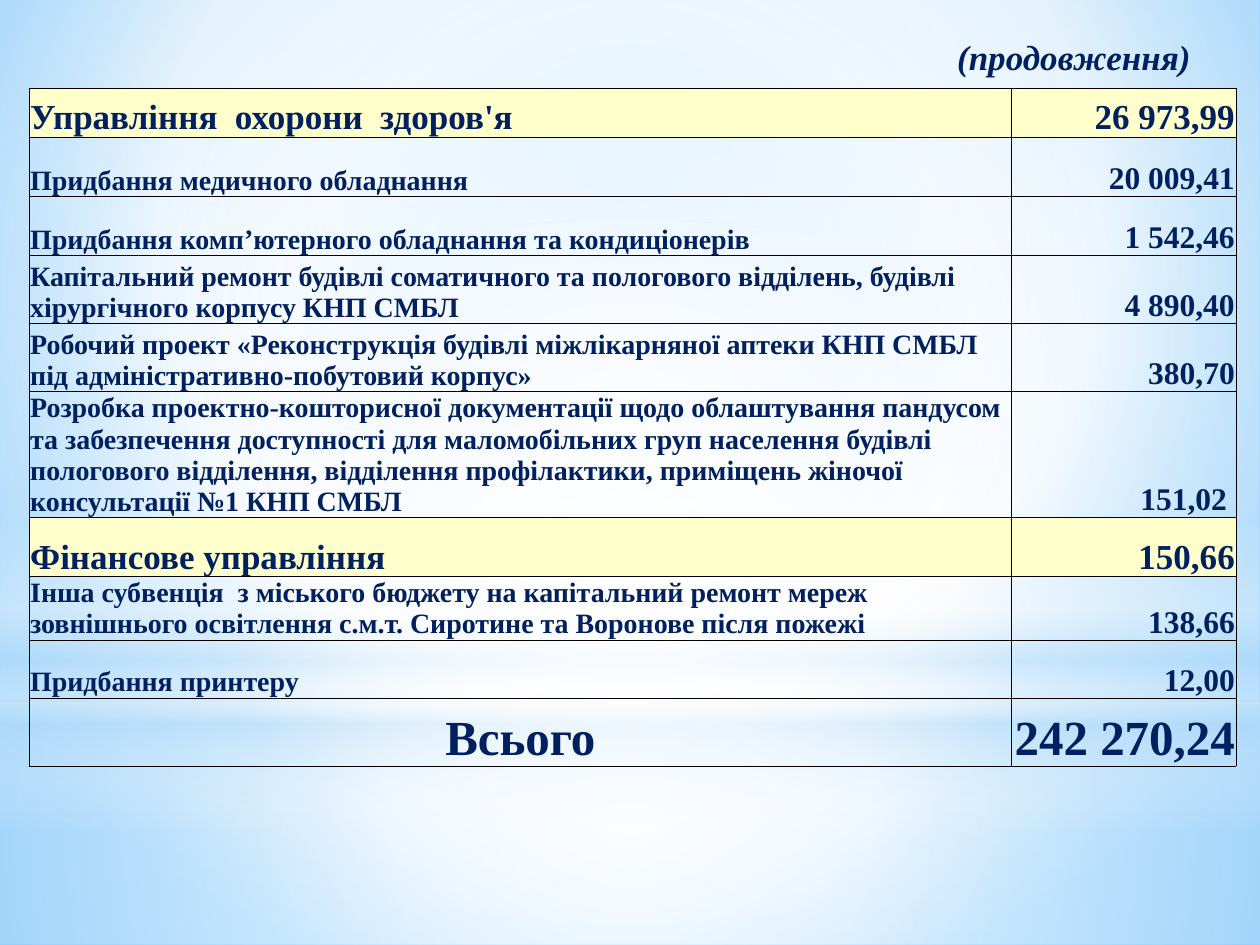
from typing import NamedTuple, Optional

from lxml.etree import SubElement as Sub
from pptx import Presentation
from pptx.dml.color import RGBColor as Rgb
from pptx.enum.shapes import MSO_SHAPE as Shp
from pptx.enum.text import MSO_ANCHOR as Anc, MSO_AUTO_SIZE as Fit, PP_ALIGN as Al
from pptx.oxml.ns import qn
from pptx.util import Inches, Pt

INK = {
    "navy": "002060", "cream": "FFFFCC", "black": "000000", "white": "FFFFFF",
    "pale": "B4DCFA", "sky": "9ED5FF", "blue": "5BB9FF",
}
FONT = "Times New Roman"
MID = (50, 50, 50, 50)


class Stop(NamedTuple):
    pos: int
    ink: str
    seen: int = 100


class Glow(NamedTuple):
    kind: Shp
    top: float
    high: float
    stops: list[Stop]
    focus: Optional[tuple] = MID


class Row(NamedTuple):
    name: str
    sum: str
    high: float
    size: int = 16
    cost: int = 18
    fill: Optional[str] = None
    align: Al = Al.LEFT


GLOWS = [
    Glow(Shp.RECTANGLE, 5.58, 1.92,
         [Stop(0, "white", 91), Stop(37, "white", 76), Stop(100, "pale", 79)]),
    Glow(Shp.RECTANGLE, 0, 5.58,
         [Stop(0, "white", 89), Stop(48, "white", 62), Stop(100, "pale", 79)]),
    Glow(Shp.RECTANGLE, 4.12, 2.5,
         [Stop(0, "white", 0), Stop(29, "white", 30), Stop(45, "pale", 40),
          Stop(55, "white", 26), Stop(65, "pale", 60), Stop(100, "white", 0)], None),
    Glow(Shp.OVAL, 1.75, 5.58, [Stop(0, "white"), Stop(56, "white", 0)]),
]

ROWS = [
    Row("Управління  охорони  здоров'я", "26 973,99", 0.39, 20, 20, "cream"),
    Row("Придбання медичного обладнання", "20 009,41", 0.47),
    Row("Придбання комп’ютерного обладнання та кондиціонерів", "1 542,46", 0.47),
    Row("Капітальний ремонт будівлі соматичного та пологового відділень, будівлі "
        "хірургічного корпусу КНП СМБЛ", "4 890,40", 0.54),
    Row("Робочий проект «Реконструкція будівлі міжлікарняної аптеки КНП СМБЛ "
        "під адміністративно-побутовий корпус»", "380,70", 0.54),
    Row("Розробка проектно-кошторисної документації щодо облаштування пандусом "
        "та забезпечення доступності для маломобільних груп населення будівлі "
        "пологового відділення, відділення профілактики, приміщень жіночої "
        "консультації №1 КНП СМБЛ", "151,02 ", 0.47),
    Row("Фінансове управління", "150,66", 0.47, 20, 20, "cream"),
    Row("Інша субвенція  з міського бюджету на капітальний ремонт мереж "
        "зовнішнього освітлення с.м.т. Сиротине та Воронове після пожежі",
        "138,66", 0.46),
    Row("Придбання принтеру", "12,00", 0.46),
    Row("Всього", "242 270,24", 0.54, 28, 28, align=Al.CENTER),
]


def shade(fill, node, stops: list[Stop], focus: Optional[tuple]) -> None:
    fill.gradient()
    grad = next(node.iter(qn("a:gradFill")))
    for kid in list(grad):
        grad.remove(kid)
    group = Sub(grad, qn("a:gsLst"))
    for stop in stops:
        mark = Sub(group, qn("a:gs"), pos=str(stop.pos * 1000))
        tint = Sub(mark, qn("a:srgbClr"), val=INK[stop.ink])
        if stop.seen < 100:
            Sub(tint, qn("a:alpha"), val=str(stop.seen * 1000))
    if focus:
        way = Sub(grad, qn("a:path"), {"path": "circle"})
        Sub(way, qn("a:fillToRect"),
            {side: str(part * 1000) for side, part in zip("ltrb", focus)})
    else:
        Sub(grad, qn("a:lin"), ang="5400000", scaled="0")


def write(frame, text: str, *, size: int, align: Al = Al.LEFT,
          slant: bool = False) -> None:
    par = frame.paragraphs[0]
    par.alignment = align
    run = par.add_run()
    run.text = text
    font = run.font
    font.name, font.size, font.bold, font.italic = FONT, Pt(size), True, slant
    font.color.rgb = Rgb.from_string(INK["navy"])


def edge(cell) -> None:
    props = cell._tc.get_or_add_tcPr()
    for spot, side in enumerate(("lnL", "lnR", "lnT", "lnB")):
        line = Sub(props, qn(f"a:{side}"), w=str(Pt(0.5)))
        Sub(Sub(line, qn("a:solidFill")), qn("a:srgbClr"), val=INK["black"])
        props.insert(spot, line)


def draw_glow(slide, glow: Glow) -> None:
    shape = slide.shapes.add_shape(
        glow.kind, 0, Inches(glow.top), Inches(10), Inches(glow.high))
    shape.shadow.inherit = False
    shape.line.fill.background()
    shade(shape.fill, shape._element, glow.stops, glow.focus)


def draw_cell(cell, text: str, size: int, align: Al, fill: Optional[str]) -> None:
    cell.vertical_anchor = Anc.BOTTOM
    cell.margin_left = cell.margin_right = cell.margin_top = Inches(0.01)
    cell.margin_bottom = 0
    if fill:
        cell.fill.solid()
        cell.fill.fore_color.rgb = Rgb.from_string(INK[fill])
    else:
        cell.fill.background()
    edge(cell)
    write(cell.text_frame, text, size=size, align=align)


def draw_table(slide, rows: list[Row]) -> None:
    high = Inches(5.51)
    frame = slide.shapes.add_table(
        len(rows), 2, Inches(0.23), Inches(0.7), Inches(9.58), high)
    table = frame.table
    table.first_row = table.horz_banding = False
    for col, wide in zip(table.columns, (7.8, 1.78)):
        col.width = Inches(wide)
    for spot, row in enumerate(rows):
        table.rows[spot].height = Inches(row.high)
        draw_cell(table.cell(spot, 0), row.name, row.size, row.align, row.fill)
        draw_cell(table.cell(spot, 1), row.sum, row.cost, Al.RIGHT, row.fill)
    frame.height = high


def draw_title(slide, text: str) -> None:
    title = slide.shapes.title
    title.left, title.top = Inches(0.55), Inches(0.23)
    title.width, title.height = Inches(9), Inches(0.44)
    frame = title.text_frame
    frame.auto_size = Fit.NONE
    frame.vertical_anchor = Anc.MIDDLE
    write(frame, text, size=20, align=Al.RIGHT, slant=True)
    slide.shapes._spTree.append(title._element)


def main() -> None:
    deck = Presentation()
    deck.slide_width, deck.slide_height = Inches(10), Inches(7.5)
    slide = deck.slides.add_slide(deck.slide_layouts[5])
    shade(slide.background.fill, slide._element,
          [Stop(0, "sky"), Stop(60, "white"), Stop(100, "blue")], (20, 10, 20, 60))
    for glow in GLOWS:
        draw_glow(slide, glow)
    draw_title(slide, "(продовження)")
    draw_table(slide, ROWS)
    deck.save("out.pptx")


if __name__ == "__main__":
    main()
